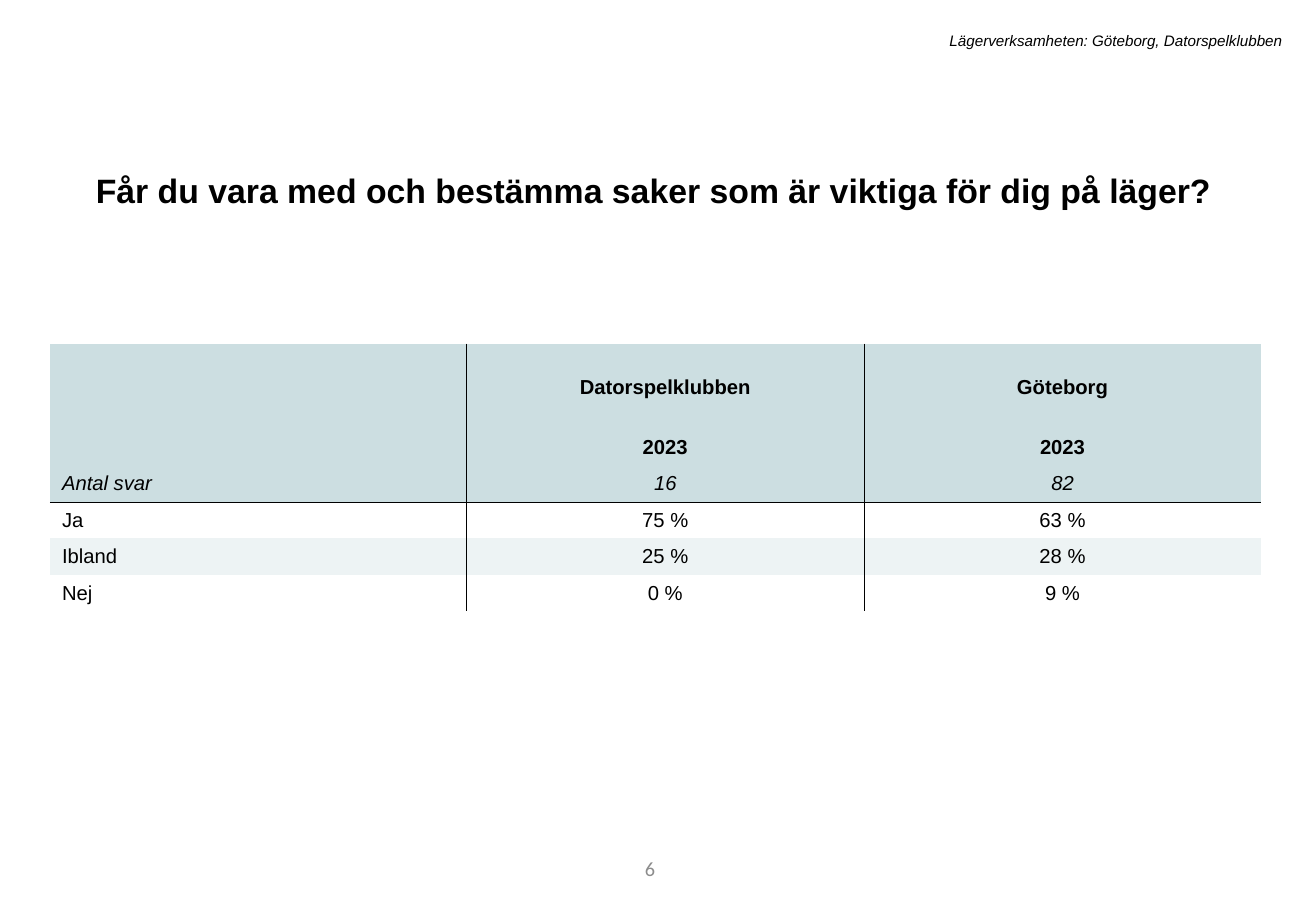
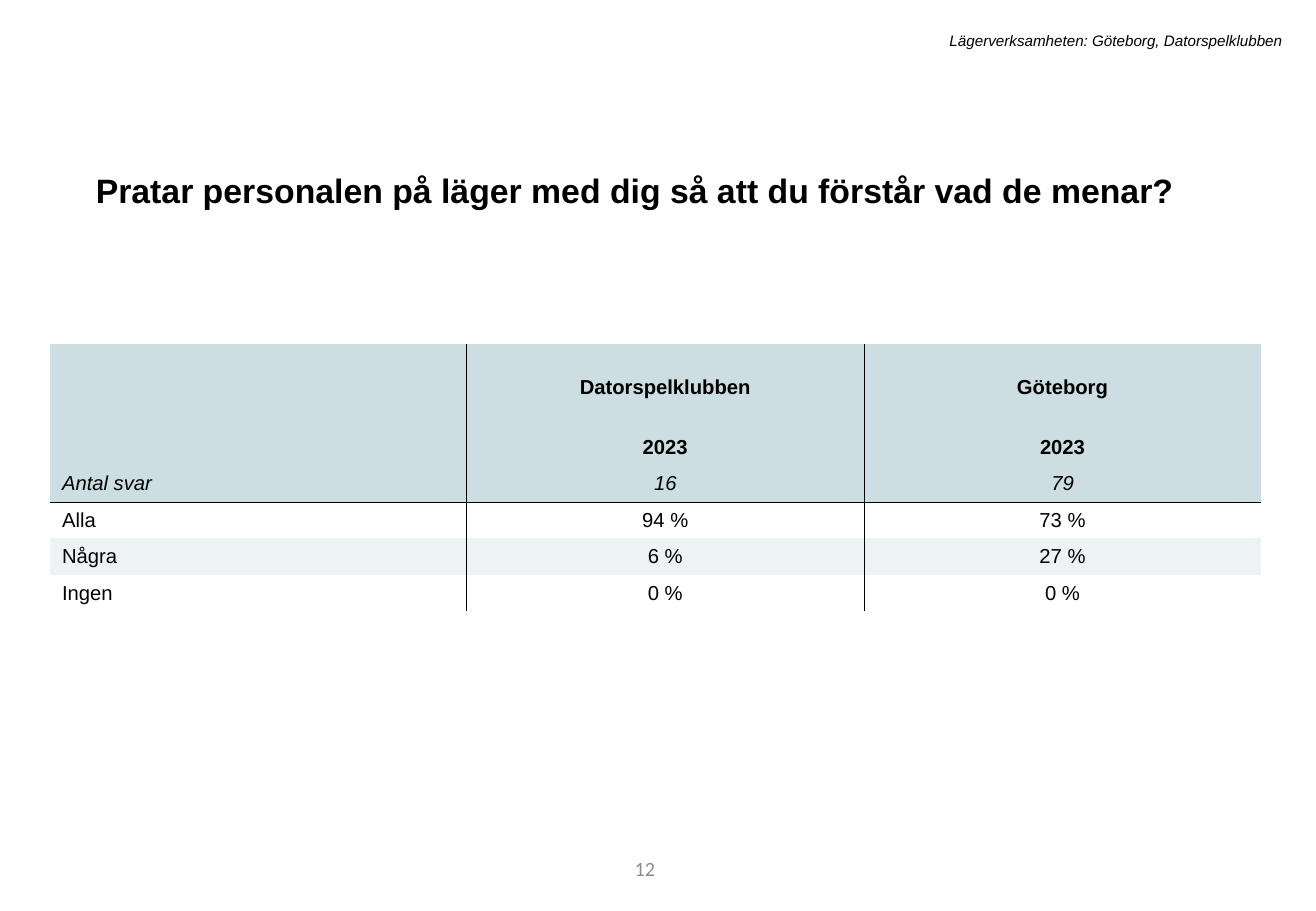
"""Build two survey result slides, each with a question and a results table."""
from lxml import etree
from pptx import Presentation
from pptx.dml.color import RGBColor
from pptx.enum.text import MSO_ANCHOR, PP_ALIGN
from pptx.oxml.ns import qn
from pptx.util import Inches, Pt

LEFT, CENTER, RIGHT = PP_ALIGN.LEFT, PP_ALIGN.CENTER, PP_ALIGN.RIGHT
TOP, MIDDLE, BOTTOM = MSO_ANCHOR.TOP, MSO_ANCHOR.MIDDLE, MSO_ANCHOR.BOTTOM

BLACK = RGBColor(0x00, 0x00, 0x00)
GREY = RGBColor(0x8C, 0x8C, 0x8C)
HEADER_TEAL = RGBColor(0xCC, 0xDE, 0xE1)
BAND_TEAL = RGBColor(0xED, 0xF3, 0xF4)
ROW_FILLS = [HEADER_TEAL] * 3 + [None, BAND_TEAL, None]

CAMP = "Lägerverksamheten: Göteborg, Datorspelklubben"
HEADINGS = [("", "Datorspelklubben", "Göteborg"), ("", "2023", "2023")]
HEADER_ROWS = 3

QUESTIONS = [
    (6, "Får du vara med och bestämma saker som är viktiga för dig på läger?", [
        ("Antal svar", "16", "82"),
        ("Ja", "75 %", "63 %"),
        ("Ibland", "25 %", "28 %"),
        ("Nej", "0 %", "9 %"),
    ]),
    (12, "Pratar personalen på läger med dig så att du förstår vad de menar?", [
        ("Antal svar", "16", "79"),
        ("Alla", "94 %", "73 %"),
        ("Några", "6 %", "27 %"),
        ("Ingen", "0 %", "0 %"),
    ]),
]

deck = Presentation()
deck.slide_width, deck.slide_height = Inches(10.83), Inches(7.5)
GRID_X, GRID_Y = deck.slide_width / 100, deck.slide_height / 100
COLUMN_WIDTHS = [31.67, 30.19, 30.19]
ROW_HEIGHTS = [6.67, 6.67, 4, 4, 4, 4]


def write(frame, text, align, size, color=BLACK, font="Arial", bold=False, italic=False):
    frame.text = text
    paragraph = frame.paragraphs[0]
    paragraph.alignment = align
    for run in paragraph.runs:
        run.font.name, run.font.size = font, Pt(size)
        run.font.bold, run.font.italic = bold, italic
        run.font.color.rgb = color
    return paragraph


def add_text(slide, area, text, align, size, anchor=TOP, **style):
    left, top, width, height = area
    box = slide.shapes.add_textbox(
        int(left * GRID_X), int(top * GRID_Y), int(width * GRID_X), int(height * GRID_Y))
    box.text_frame.word_wrap = True
    box.text_frame.vertical_anchor = anchor
    return write(box.text_frame, text, align, size, **style)


for page, question, answers in QUESTIONS:
    slide = deck.slides.add_slide(deck.slide_layouts[6])
    add_text(slide, (28.16, 92.67, 22.53, 5.33), str(page), RIGHT, 12,
             MIDDLE, color=GREY, font="Calibri")
    title = add_text(slide, (6.37, 17.07, 86.8, 6.27), question, LEFT, 20, bold=True)
    title.line_spacing, title.space_before = 1.2, Pt(10)
    add_text(slide, (16.53, 2.8, 81.81, 3.33), CAMP, RIGHT, 9, italic=True)

    rows = HEADINGS + answers
    results = slide.shapes.add_table(
        len(rows), len(COLUMN_WIDTHS), int(3.79 * GRID_X), int(37.73 * GRID_Y),
        int(sum(COLUMN_WIDTHS) * GRID_X), int(sum(ROW_HEIGHTS) * GRID_Y)).table
    results.first_row = results.horz_banding = False
    for column, width in zip(results.columns, COLUMN_WIDTHS):
        column.width = int(width * GRID_X)

    for r, (labels, height, fill) in enumerate(zip(rows, ROW_HEIGHTS, ROW_FILLS)):
        results.rows[r].height = int(height * GRID_Y)
        is_heading = r < len(HEADINGS)
        for c, label in enumerate(labels):
            cell = results.cell(r, c)
            cell.vertical_anchor = BOTTOM if is_heading else MIDDLE
            write(cell.text_frame, label, CENTER if c else LEFT, 12,
                  bold=is_heading, italic=r == len(HEADINGS))
            ruled = {
                "lnL": c > 0,
                "lnR": c < len(labels) - 1,
                "lnT": r == HEADER_ROWS,
                "lnB": r == HEADER_ROWS - 1,
            }
            for edge, visible in ruled.items():
                border = etree.SubElement(
                    cell._tc.get_or_add_tcPr(), qn(f"a:{edge}"), w=str(Pt(0.25)))
                if visible:
                    ink = etree.SubElement(border, qn("a:solidFill"))
                    etree.SubElement(ink, qn("a:srgbClr"), val=str(BLACK))
                else:
                    etree.SubElement(border, qn("a:noFill"))
            if fill is None:
                cell.fill.background()
            else:
                cell.fill.solid()
                cell.fill.fore_color.rgb = fill

deck.save("out.pptx")
